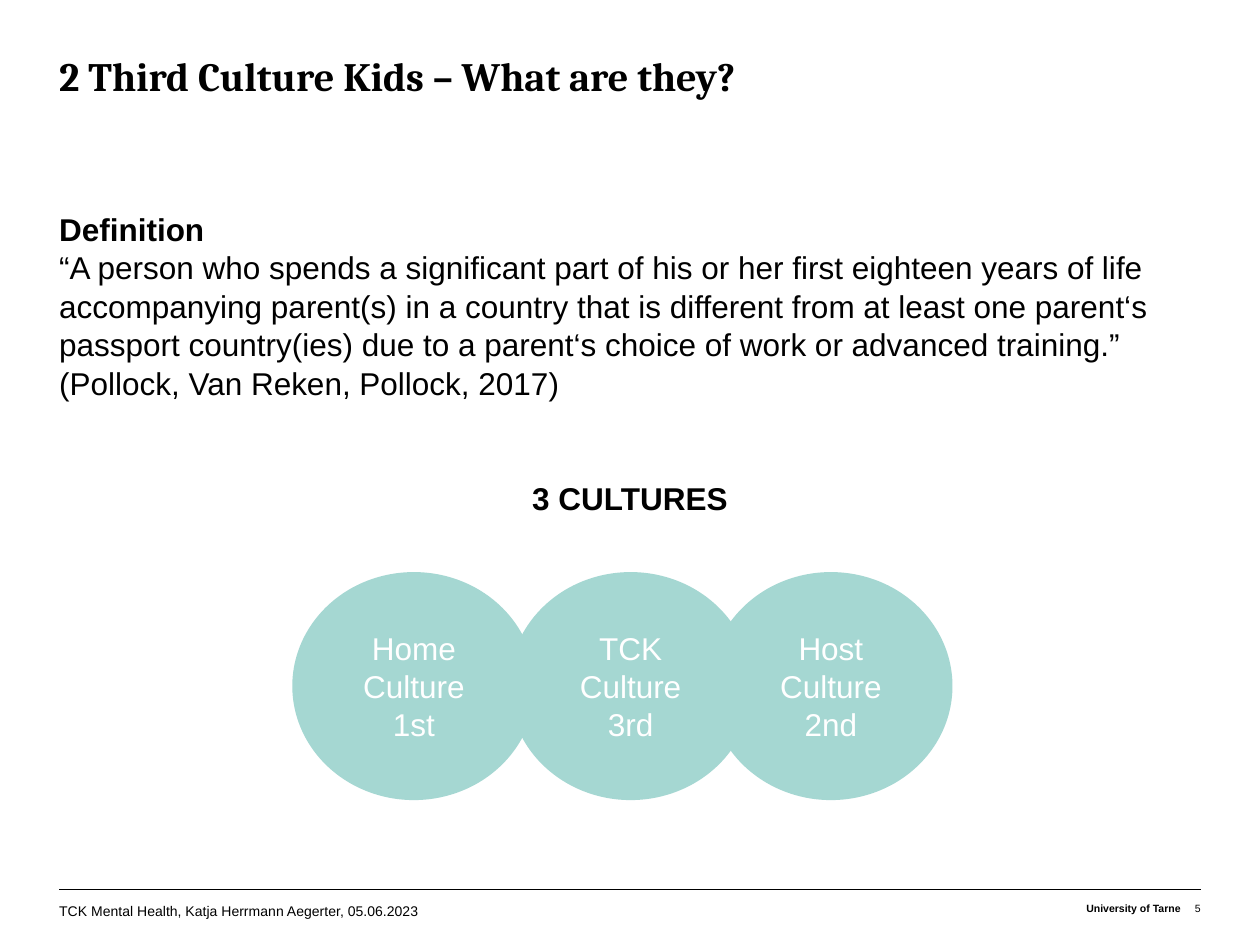
import pptx
import pptx.dml.color
import pptx.enum.shapes
import pptx.enum.text
import pptx.oxml.ns
import pptx.util
from lxml import etree
from pptx.util import Inches

Pt = pptx.util.Pt
ALIGN = pptx.enum.text.PP_ALIGN
COLORS = {"ink": "000000", "circle": "A5D7D2", "circle text": "FFFFFF"}
LEFT, RIGHT = 0.47, 9.53


def color(name):
    return pptx.dml.color.RGBColor.from_string(COLORS[name])


def write(frame, lines, size, ink="ink", font="Arial", bold=(), align=ALIGN.LEFT, spacing=None):
    """Fill a text frame; bold holds the indexes of the bold paragraphs."""
    frame.word_wrap = True
    frame.text = "\n".join(lines)
    for index, para in enumerate(frame.paragraphs):
        para.alignment = align
        if spacing:
            para.line_spacing = Pt(spacing)
        for span in para.runs:
            span.font.name = font
            span.font.size = Pt(size)
            span.font.bold = index in bold
            span.font.color.rgb = color(ink)


deck = pptx.Presentation()
deck.slide_width, deck.slide_height = Inches(10), Inches(7.5)
page = deck.slides.add_slide(deck.slide_layouts[6])

rule = page.shapes.add_connector(
    pptx.enum.shapes.MSO_CONNECTOR.STRAIGHT,
    Inches(LEFT), Inches(7.06), Inches(RIGHT), Inches(7.06))
rule.line.color.rgb = color("ink")
rule.line.width = Pt(0.25)
etree.SubElement(rule._element.spPr, pptx.oxml.ns.qn("a:effectLst"))

definition = [
    "Definition",
    "“A person who spends a significant part of his or her first eighteen years of life "
    "accompanying parent(s) in a country that is different from at least one parent‘s "
    "passport country(ies) due to a parent‘s choice of work or advanced training.” "
    "(Pollock, Van Reken, Pollock, 2017)",
    "3 CULTURES",
]
footer = "TCK Mental Health, Katja Herrmann Aegerter, 05.06.2023"

# left, top, width, height, top inset, lines, text format
texts = [
    (LEFT, 0.44, 9.06, 0.83, 0, ["2 Third Culture Kids – What are they?"],
     dict(size=23, font="Cambria", bold=[0], spacing=25)),
    (LEFT, 1.66, 9.06, 5.16, 0, definition, dict(size=18, bold=[0, 2], spacing=22)),
    (LEFT, 7.14, 3.43, 0.08, 0.02, [footer], dict(size=8)),
    (7.28, 7.14, 2.09, 0.2, 0.02, ["University of Tarne"],
     dict(size=6, bold=[0], align=ALIGN.RIGHT)),
    (9.37, 7.14, 0.16, 0.2, 0.02, ["5"], dict(size=6, align=ALIGN.RIGHT)),
]
for left, top, width, height, inset, lines, style in texts:
    box = page.shapes.add_textbox(Inches(left), Inches(top), Inches(width), Inches(height))
    frame = box.text_frame
    frame.margin_left = frame.margin_right = frame.margin_bottom = 0
    frame.margin_top = Inches(inset)
    write(frame, lines, **style)
    if lines is definition:
        heading = frame.paragraphs[-1]
        heading.alignment = ALIGN.CENTER
        heading.space_before = Pt(44)

cultures = [
    (2.32, ["Home Culture", "1st"]),
    (4.04, ["TCK Culture 3rd"]),
    (5.63, ["Host Culture 2nd"]),
]
for left, lines in cultures:
    circle = page.shapes.add_shape(
        pptx.enum.shapes.MSO_SHAPE.OVAL,
        Inches(left), Inches(4.54), Inches(1.93), Inches(1.81))
    circle.shadow.inherit = False
    circle.fill.solid()
    circle.fill.fore_color.rgb = color("circle")
    circle.line.fill.background()
    circle.text_frame.vertical_anchor = pptx.enum.text.MSO_ANCHOR.MIDDLE
    write(circle.text_frame, lines, 18, ink="circle text", align=ALIGN.CENTER)

deck.save("out.pptx")
